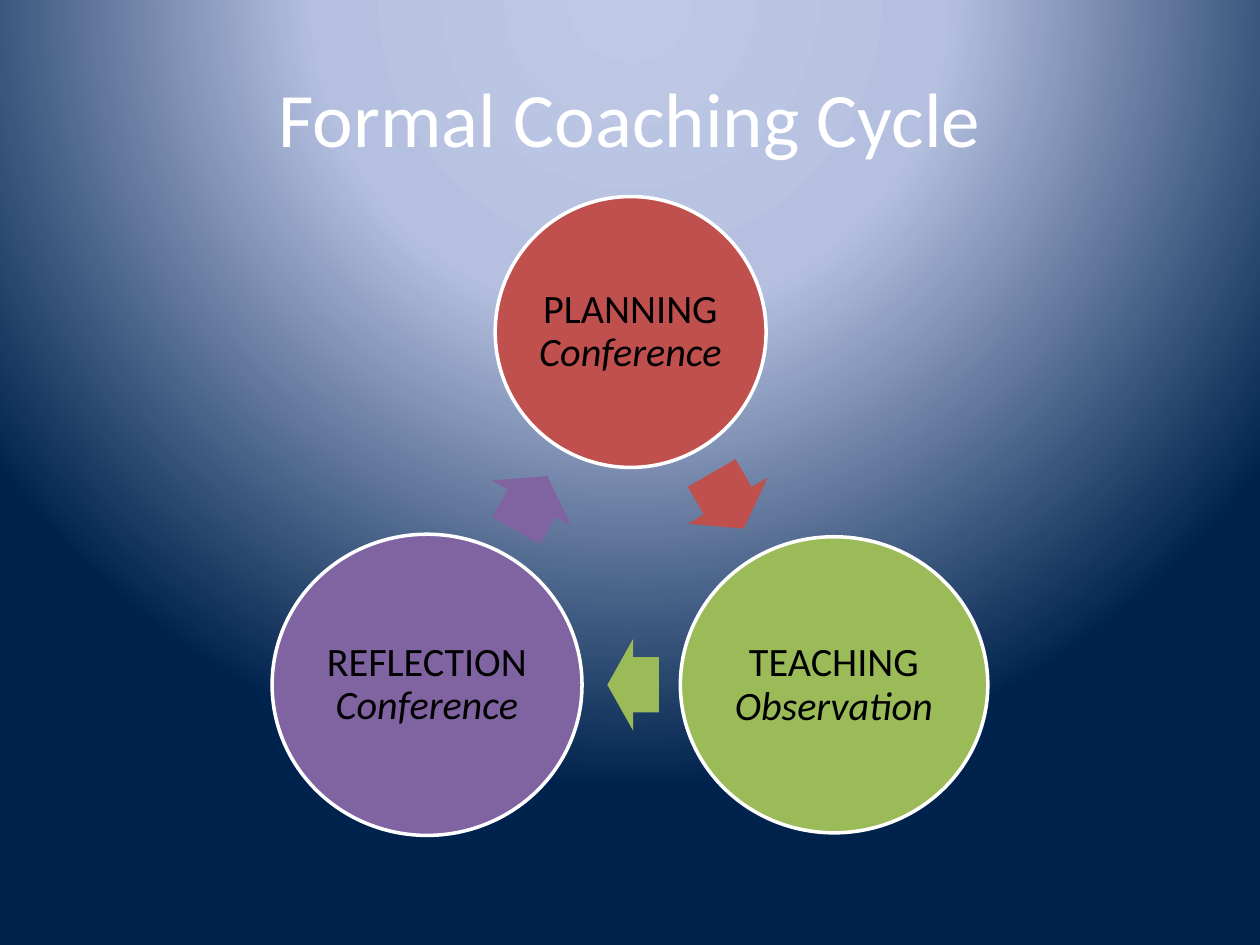
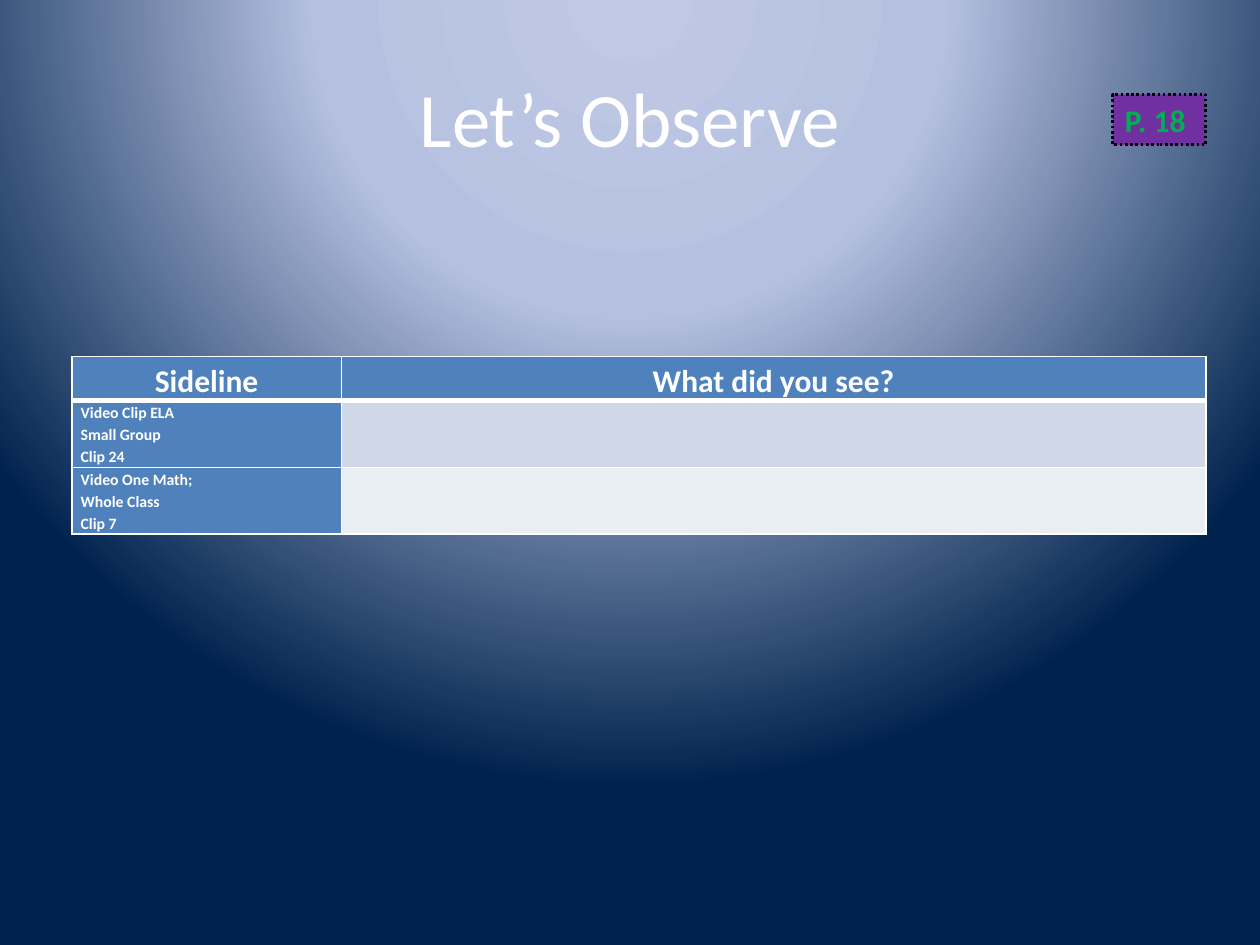
from pptx import Presentation
from pptx.dml.color import RGBColor
from pptx.enum.dml import MSO_LINE
from pptx.enum.shapes import MSO_SHAPE as Shape
from pptx.enum.text import MSO_ANCHOR as Anchor, MSO_AUTO_SIZE as AutoSize, PP_ALIGN as Align
from pptx.oxml import parse_xml
from pptx.oxml.ns import nsdecls, qn
from pptx.util import Inches, Pt

FONT = "Calibri"
WHITE, BLACK, BLUE = "FFFFFF", "000000", "4F81BD"
BACKGROUND_STOPS = [(0, "BFC9E5"), (40, "B5C0E0"), (100, "00234D")]

# colour, circle box, arrow box, text runs (text, size, italic)
STAGES = [
    ("C0504D", (3.93, 1.56, 2.15, 2.15), (5.52, 3.61, 0.51, 0.73),
     [("PLANNING", 23, False), (" Conference", 23, True)]),
    ("9BBB59", (5.4, 4.26, 2.44, 2.35), (4.82, 5.07, 0.41, 0.73),
     [("TEACHING", 23, False), (" ", 24, True), ("Observation", 23, True)]),
    ("8064A2", (2.16, 4.24, 2.46, 2.39), (3.97, 3.63, 0.5, 0.73),
     [("REFLECTION", 23, False), (" Conference", 23, True)]),
]

HEADERS = ["Sideline", "What did you see?"]
CLIPS = [
    (["Video Clip ELA", "Small Group", "Clip 24"], "D0D8E8"),
    (["Video One Math;", "Whole Class", "Clip 7"], "E9EDF4"),
]
COLUMN_WIDTHS = [2.14, 6.86]
ROW_HEIGHTS = [0.35, 0.53, 0.53]


def color(hex_string):
    return RGBColor.from_string(hex_string)


def place(box):
    return [Inches(length) for length in box]


def set_insets(frame, inset):
    frame.margin_left = frame.margin_right = Inches(inset)
    frame.margin_top = frame.margin_bottom = Inches(inset)


def add_run(paragraph, text, size, hex_string, bold=False, italic=False):
    run = paragraph.add_run()
    run.text = text
    font = run.font
    font.name, font.size, font.bold, font.italic = FONT, Pt(size), bold, italic
    font.color.rgb = color(hex_string)


def set_background(slide):
    """Light spot above the top edge, fading to navy."""
    slide.background.fill.gradient()
    default = slide.element.find(".//" + qn("a:gradFill"))
    stops = "".join(f'<a:gs pos="{position * 1000}"><a:srgbClr val="{value}"/></a:gs>'
                    for position, value in BACKGROUND_STOPS)
    gradient = parse_xml(
        f'<a:gradFill {nsdecls("a")} rotWithShape="1"><a:gsLst>{stops}</a:gsLst>'
        '<a:path path="circle"><a:fillToRect l="50000" t="-80000" r="50000" b="180000"/>'
        '</a:path></a:gradFill>')
    default.getparent().replace(default, gradient)


def add_titled_slide(presentation, title):
    slide = presentation.slides.add_slide(presentation.slide_layouts[6])
    set_background(slide)
    frame = slide.shapes.add_textbox(*place((0.5, 0.3, 9, 1.25))).text_frame
    frame.word_wrap = True
    frame.vertical_anchor = Anchor.MIDDLE
    paragraph = frame.paragraphs[0]
    paragraph.alignment = Align.CENTER
    add_run(paragraph, title, 44, WHITE)
    return slide


def add_filled_shape(slide, kind, box, fill, line=None, line_width=0):
    shape = slide.shapes.add_shape(kind, *place(box))
    shape.shadow.inherit = False
    shape.fill.solid()
    shape.fill.fore_color.rgb = color(fill)
    if line:
        shape.line.color.rgb = color(line)
        shape.line.width = Pt(line_width)
    else:
        shape.line.fill.background()
    return shape


def add_stage(slide, index, fill, circle_box, arrow_box, runs):
    circle = add_filled_shape(slide, Shape.OVAL, circle_box, fill, WHITE, 2)
    frame = circle.text_frame
    frame.word_wrap = True
    frame.vertical_anchor = Anchor.MIDDLE
    set_insets(frame, 0.03)
    paragraph = frame.paragraphs[0]
    paragraph.alignment = Align.CENTER
    paragraph.line_spacing = 0.9
    for text, size, italic in runs:
        add_run(paragraph, text, size, BLACK, italic=italic)

    arrow = add_filled_shape(slide, Shape.RIGHT_ARROW, arrow_box, fill)
    arrow.adjustments[0], arrow.adjustments[1] = 0.6, 0.5
    arrow.rotation = 60 + 120 * index


def set_borders(cell, **widths):
    properties = cell._tc.get_or_add_tcPr()
    for position, side in enumerate("LRTB"):
        width = Pt(widths.get(side, 1))
        properties.insert(position, parse_xml(
            f'<a:ln{side} {nsdecls("a")} w="{width}"><a:solidFill>'
            f'<a:srgbClr val="{WHITE}"/></a:solidFill></a:ln{side}>'))


def fill_cell(cell, lines, size, fill, alignment=Align.LEFT):
    cell.fill.solid()
    cell.fill.fore_color.rgb = color(fill)
    cell.margin_left = cell.margin_right = Inches(0.07)
    cell.margin_top = cell.margin_bottom = 0
    frame = cell.text_frame
    for index, line in enumerate(lines):
        paragraph = frame.add_paragraph() if index else frame.paragraphs[0]
        paragraph.alignment = alignment
        paragraph.line_spacing = 1.15
        add_run(paragraph, line, size, WHITE, bold=True)


def add_observation_table(slide):
    box = (0.57, 2.83, sum(COLUMN_WIDTHS), sum(ROW_HEIGHTS))
    table = slide.shapes.add_table(len(ROW_HEIGHTS), len(COLUMN_WIDTHS), *place(box)).table
    for column, width in zip(table.columns, COLUMN_WIDTHS):
        column.width = Inches(width)
    for row, height in zip(table.rows, ROW_HEIGHTS):
        row.height = Inches(height)
    for column, header in enumerate(HEADERS):
        fill_cell(table.cell(0, column), [header], 18, BLUE, Align.CENTER)
        set_borders(table.cell(0, column), B=3)
    for row, (lines, answer_fill) in enumerate(CLIPS, start=1):
        fill_cell(table.cell(row, 0), lines, 9, BLUE)
        fill_cell(table.cell(row, 1), [], 9, answer_fill)
        for column in range(len(HEADERS)):
            set_borders(table.cell(row, column), T=3 if row == 1 else 1)


def add_page_tag(slide, text):
    tag = add_filled_shape(slide, Shape.RECTANGLE, (8.83, 0.75, 0.74, 0.4), "7030A0", BLACK, 1.5)
    tag.line.dash_style = MSO_LINE.ROUND_DOT
    frame = tag.text_frame
    frame.word_wrap = True
    frame.auto_size = AutoSize.SHAPE_TO_FIT_TEXT
    frame.vertical_anchor = Anchor.TOP
    paragraph = frame.paragraphs[0]
    paragraph.alignment = Align.LEFT
    add_run(paragraph, text, 18, "00B050", bold=True)


def main():
    presentation = Presentation()
    presentation.slide_width, presentation.slide_height = Inches(10), Inches(7.5)

    cycle_slide = add_titled_slide(presentation, "Formal Coaching Cycle")
    for index, stage in enumerate(STAGES):
        add_stage(cycle_slide, index, *stage)

    observe_slide = add_titled_slide(presentation, "Let’s Observe")
    add_observation_table(observe_slide)
    add_page_tag(observe_slide, "P. 18")

    presentation.save("out.pptx")


if __name__ == "__main__":
    main()
